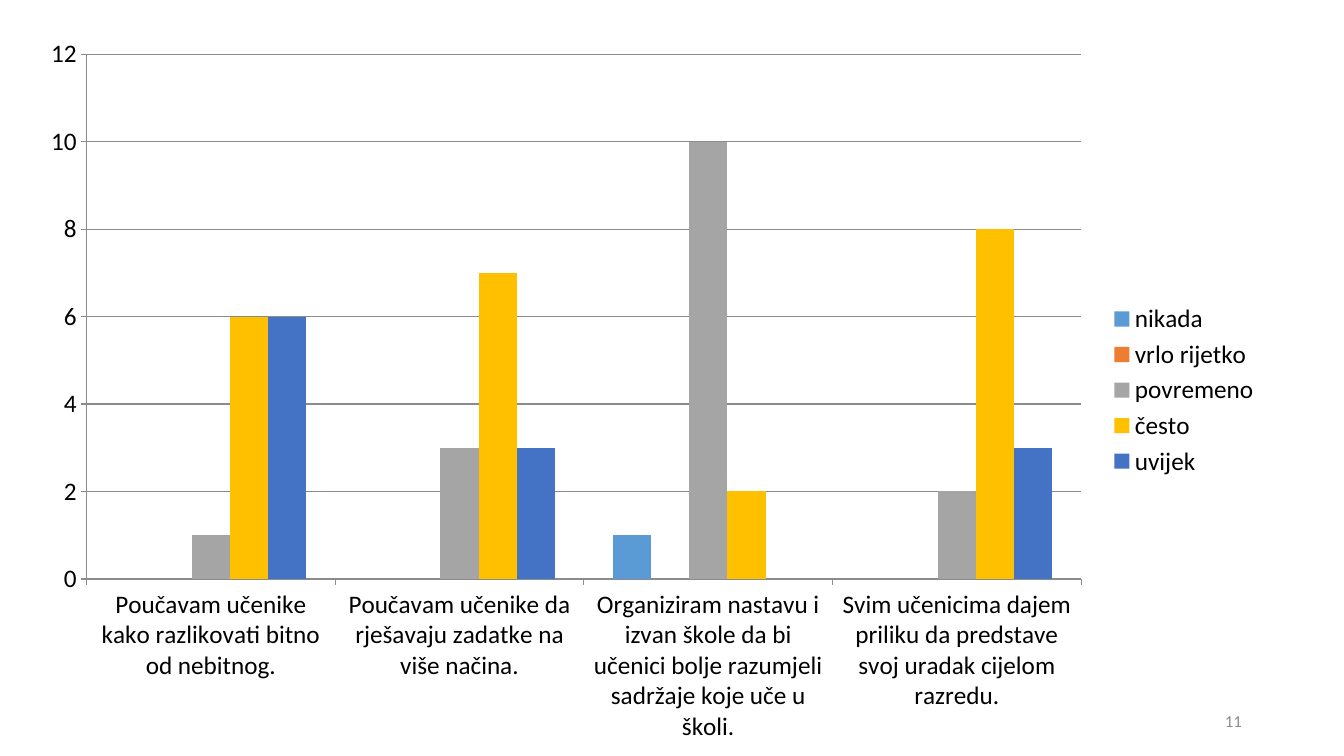
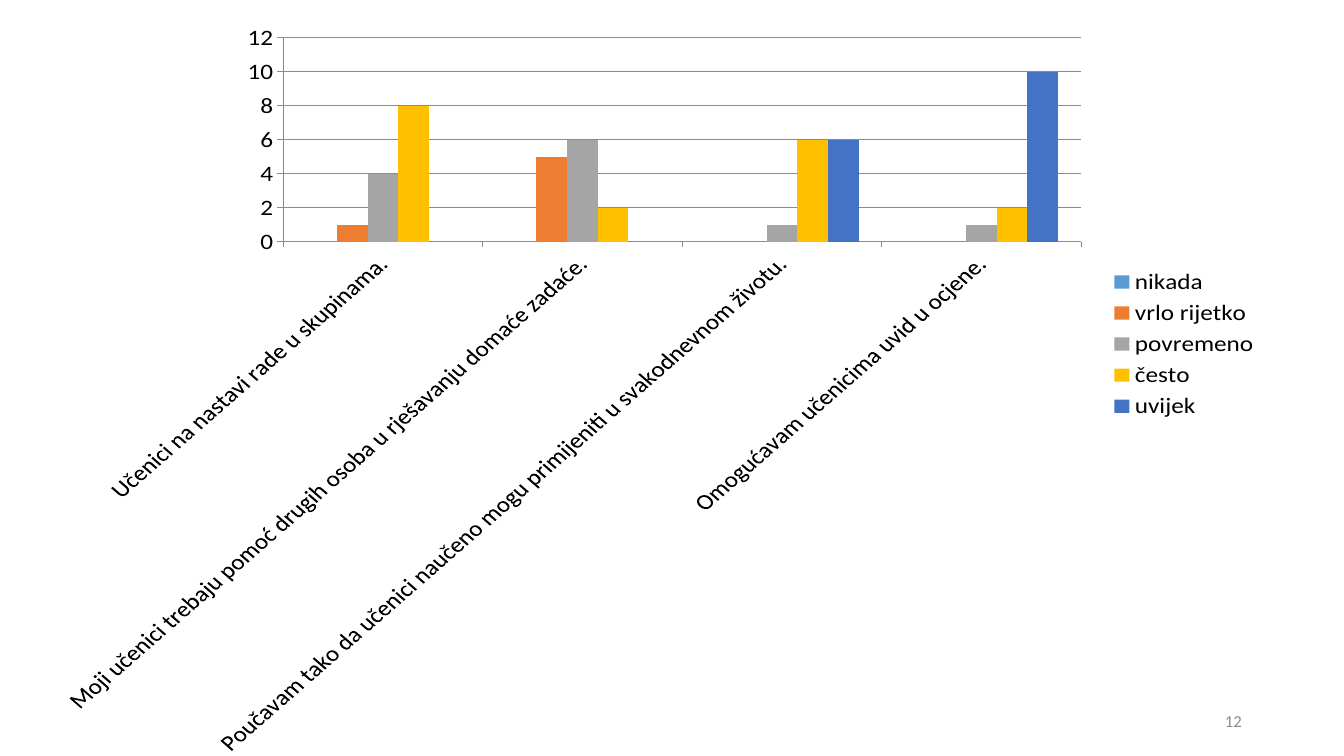
import pptx
import pptx.chart.data
import pptx.dml.color
import pptx.enum.chart
import pptx.enum.text
import pptx.util

Pt = pptx.util.Pt
RGBColor = pptx.dml.color.RGBColor

BLACK = RGBColor(0x00, 0x00, 0x00)
AXIS_GREY = RGBColor(0x8B, 0x8B, 0x8B)
NUMBER_GREY = RGBColor(0x8C, 0x8C, 0x8C)

# Answer scale, shared by both charts
ANSWERS = {
    "nikada": RGBColor(0x5B, 0x9B, 0xD5),
    "vrlo rijetko": RGBColor(0xED, 0x7D, 0x31),
    "povremeno": RGBColor(0xA5, 0xA5, 0xA5),
    "često": RGBColor(0xFF, 0xC0, 0x00),
    "uvijek": RGBColor(0x44, 0x72, 0xC4),
}

# Per slide: label rotation in degrees, and each statement with its answer counts
SURVEY = {
    11: (0, {
        "Poučavam učenike kako razlikovati bitno od nebitnog.":
            (None, None, 1, 6, 6),
        "Poučavam učenike da rješavaju zadatke na više načina.":
            (None, None, 3, 7, 3),
        "Organiziram nastavu i izvan škole da bi učenici bolje razumjeli "
        "sadržaje koje uče u školi.":
            (1, None, 10, 2, None),
        "Svim učenicima dajem priliku da predstave svoj uradak cijelom razredu.":
            (None, None, 2, 8, 3),
    }),
    12: (-45, {
        "Učenici na nastavi rade u skupinama.":
            (None, 1, 4, 8, None),
        "Moji učenici trebaju pomoć drugih osoba u rješavanju domaće zadaće.":
            (None, 5, 6, 2, None),
        "Poučavam tako da učenici naučeno mogu primijeniti u svakodnevnom životu.":
            (None, None, 1, 6, 6),
        "Omogućavam učenicima uvid u ocjene.":
            (None, None, 1, 2, 10),
    }),
}


def apply_format(target, values):
    for name, value in values.items():
        setattr(target, name, value)


class Deck:
    """Holds the style and the current slide."""

    chart_font = {"name": "Calibri", "size": Pt(18)}
    number_font = {"name": "Calibri", "size": Pt(12)}
    chart_box = (Pt(18.7), Pt(17.3), Pt(888.5), Pt(522.7))
    number_box = (Pt(678.2), Pt(500.4), Pt(216), Pt(28.8))

    def __init__(self):
        self.presentation = pptx.Presentation()
        apply_format(self.presentation,
                     {"slide_width": Pt(960), "slide_height": Pt(540)})
        self.slide = None

    def new_slide(self):
        blank = self.presentation.slide_layouts[6]
        self.slide = self.presentation.slides.add_slide(blank)

    def style_font(self, font, values, colour):
        apply_format(font, values)
        font.color.rgb = colour

    def style_line(self, line):
        line.color.rgb = AXIS_GREY
        line.width = Pt(0.75)

    def answer_chart(self, statements, label_angle):
        counts = pptx.chart.data.CategoryChartData(number_format="General")
        counts.categories = list(statements)
        for answer, values in zip(ANSWERS, zip(*statements.values())):
            counts.add_series(answer, values)
        chart = self.slide.shapes.add_chart(
            pptx.enum.chart.XL_CHART_TYPE.COLUMN_CLUSTERED,
            *self.chart_box, counts).chart
        apply_format(chart, {"has_title": False, "has_legend": True})
        self.style_font(chart.font, self.chart_font, BLACK)

        # Columns
        columns = chart.plots[0]
        apply_format(columns, {"gap_width": 150, "overlap": 0,
                               "vary_by_categories": False})
        for series, colour in zip(columns.series, ANSWERS.values()):
            series.format.fill.solid()
            series.format.fill.fore_color.rgb = colour
            series.invert_if_negative = False

        # Axes
        for axis in (chart.category_axis, chart.value_axis):
            axis.major_tick_mark = pptx.enum.chart.XL_TICK_MARK.OUTSIDE
            self.style_line(axis.format.line)
            self.style_font(axis.tick_labels.font, self.chart_font, BLACK)
        apply_format(chart.value_axis, {
            "minimum_scale": 0, "maximum_scale": 12, "major_unit": 2,
            "has_major_gridlines": True})
        self.style_line(chart.value_axis.major_gridlines.format.line)
        label_body = chart.category_axis._element.txPr.bodyPr
        label_body.set("rot", str(label_angle * 60000))
        label_body.set("vert", "horz")

        # Legend
        apply_format(chart.legend, {
            "position": pptx.enum.chart.XL_LEGEND_POSITION.RIGHT,
            "include_in_layout": False})
        self.style_font(chart.legend.font, self.chart_font, BLACK)

    def page_number(self, number):
        frame = self.slide.shapes.add_textbox(*self.number_box).text_frame
        apply_format(frame, {
            "word_wrap": True,
            "vertical_anchor": pptx.enum.text.MSO_ANCHOR.MIDDLE})
        paragraph = frame.paragraphs[0]
        paragraph.alignment = pptx.enum.text.PP_ALIGN.RIGHT
        run = paragraph.add_run()
        run.text = str(number)
        self.style_font(run.font, self.number_font, NUMBER_GREY)


def main():
    deck = Deck()
    for number, (label_angle, statements) in SURVEY.items():
        deck.new_slide()
        deck.answer_chart(statements, label_angle)
        deck.page_number(number)
    deck.presentation.save("out.pptx")


if __name__ == "__main__":
    main()
